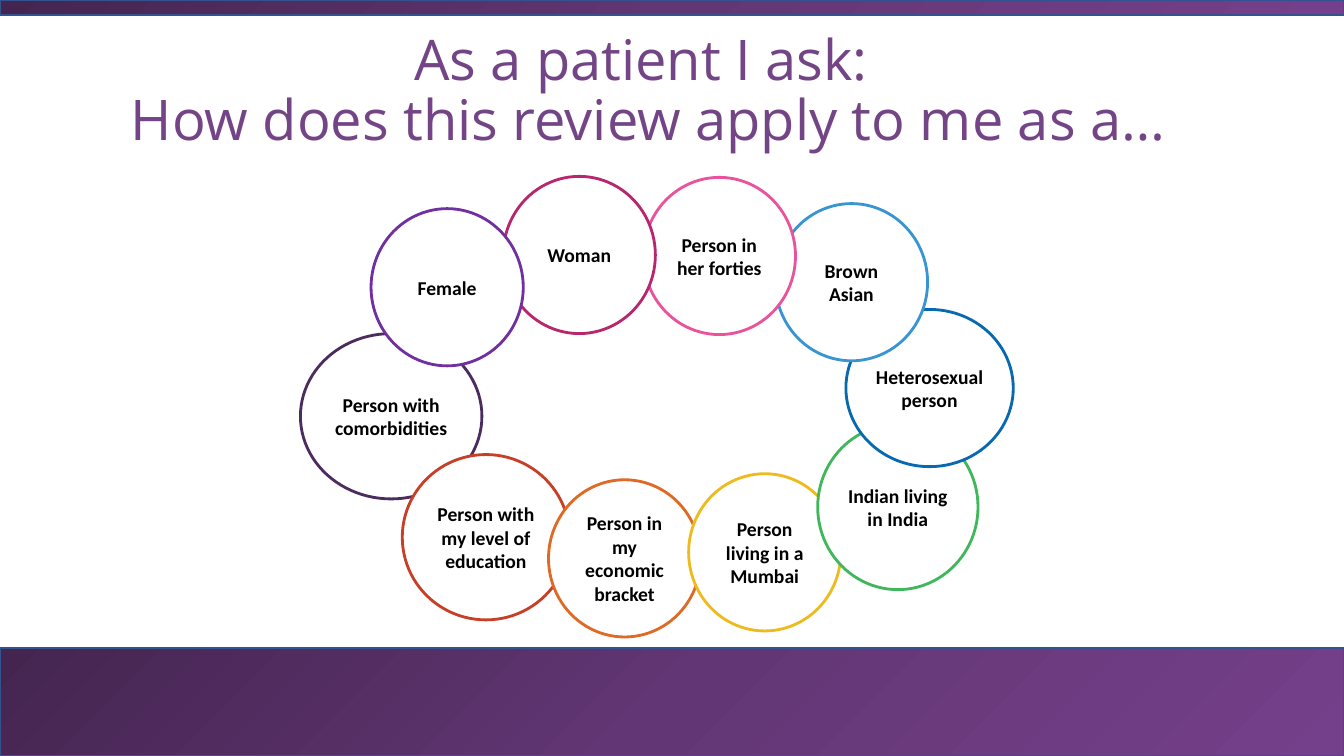
from pptx import Presentation
from pptx.dml.color import RGBColor
from pptx.enum.shapes import MSO_SHAPE as Preset
from pptx.enum.text import MSO_ANCHOR as Anchor, PP_ALIGN as Align
from pptx.oxml.ns import qn
from pptx.util import Inches, Pt
from lxml.etree import SubElement

TITLE_LINES = ["As a patient I ask: ", "How does this review apply to me as a…"]
BAR_STOPS = [(0, "442550"), (50, "623674"), (100, "75408B")]
BARS = [(6.43, 1.07), (0, 0.15)]
IDENTITIES = [
    (["Person with comorbidities"], "4B2C5D", (2.98, 3.31, 1.8, 1.64)),
    (["Person with my level of education"], "C54027", (3.99, 4.51, 1.66, 1.64)),
    (["Person in my economic bracket"], "DE6A26", (5.44, 4.76, 1.51, 1.56)),
    (["Person living in a Mumbai"], "EDBB1D", (6.83, 4.7, 1.51, 1.56)),
    (["Indian living in India"], "41B75B", (8.11, 4.21, 1.59, 1.64)),
    (["Heterosexual", "person"], "0769AF", (8.39, 3.07, 1.66, 1.56)),
    (["Brown Asian"], "3895D2", (7.69, 2.02, 1.51, 1.56)),
    (["Person in her forties"], "EA539B", (6.38, 1.76, 1.51, 1.56)),
    (["Woman"], "B8276D", (4.99, 1.75, 1.51, 1.56)),
    (["Female"], "7030A0", (3.68, 2.07, 1.51, 1.56)),
]


def color(value):
    return RGBColor.from_string(value)


def add_outlined(slide, preset, box, outline, weight):
    shape = slide.shapes.add_shape(preset, *map(Inches, box))
    shape.shadow.inherit = False
    shape.line.color.rgb = color(outline)
    shape.line.width = Pt(weight)
    return shape


def prepare_frame(frame):
    frame.word_wrap = True
    frame.vertical_anchor = Anchor.MIDDLE
    frame.margin_left = frame.margin_right = Inches(0.05)
    frame.margin_top = frame.margin_bottom = Inches(0.05)


def add_text(paragraph, text, font, size, ink, bold=False):
    paragraph.alignment = Align.CENTER
    run = paragraph.add_run()
    run.text = text
    run.font.name = font
    run.font.size = Pt(size)
    run.font.bold = bold
    run.font.color.rgb = color(ink)


def add_bar(slide, top, height):
    bar = add_outlined(slide, Preset.RECTANGLE, (0, top, 13.33, height), "32538F", 1)
    bar.fill.gradient()
    bar.fill.gradient_angle = 315
    stops = bar._element.spPr.find(".//" + qn("a:gsLst"))
    stops.clear()
    for percent, shade in BAR_STOPS:
        stop = SubElement(stops, qn("a:gs"), pos=str(percent * 1000))
        SubElement(stop, qn("a:srgbClr"), val=shade)


def add_title(slide):
    title = slide.shapes.title
    title.left, title.top = Inches(0.49), Inches(0.19)
    title.width, title.height = Inches(11.88), Inches(1.45)
    prepare_frame(title.text_frame)
    paragraph = title.text_frame.paragraphs[0]
    paragraph.line_spacing = 0.9
    for index, line in enumerate(TITLE_LINES):
        if index:
            paragraph.add_line_break()
        add_text(paragraph, line, "Open Sans", 40, "734586")


def add_identity(slide, lines, outline, box):
    circle = add_outlined(slide, Preset.OVAL, box, outline, 2)
    circle.fill.solid()
    circle.fill.fore_color.rgb = color("FFFFFF")
    frame = circle.text_frame
    prepare_frame(frame)
    for index, line in enumerate(lines):
        paragraph = frame.add_paragraph() if index else frame.paragraphs[0]
        add_text(paragraph, line, "Calibri", 14, "000000", bold=True)


def main():
    deck = Presentation()
    deck.slide_width, deck.slide_height = Inches(13.33), Inches(7.5)
    slide = deck.slides.add_slide(deck.slide_layouts[5])
    for bar in BARS:
        add_bar(slide, *bar)
    add_title(slide)
    for identity in IDENTITIES:
        add_identity(slide, *identity)
    deck.save("out.pptx")


if __name__ == "__main__":
    main()
